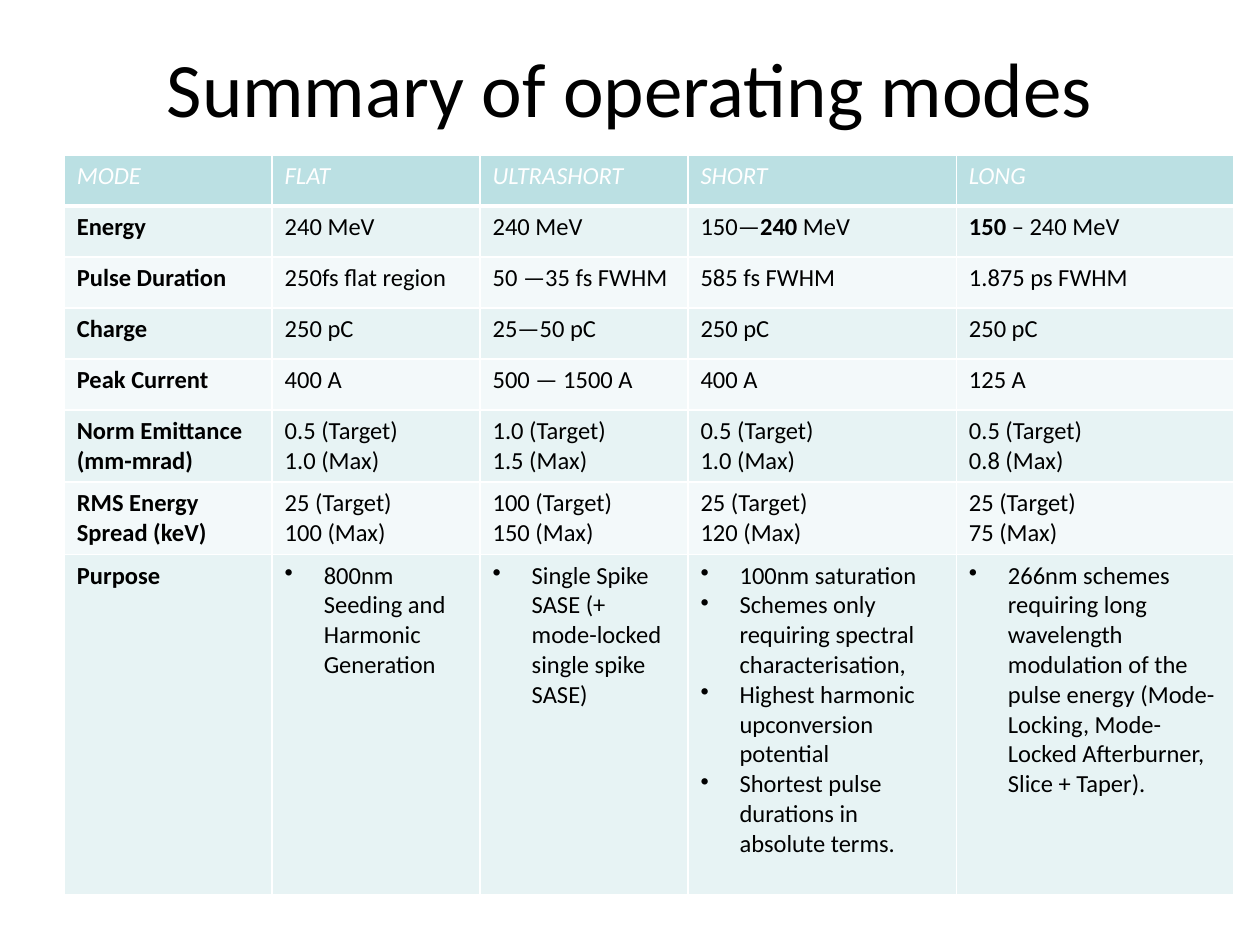
from lxml import etree
from pptx import Presentation
from pptx import util as u
from pptx.dml.color import RGBColor
from pptx.enum import text
from pptx.oxml import ns

HUES = {"head": "BBE0E3", "dark": "E7F3F4", "light": "F3F9FA",
        "ink": "000000", "white": "FFFFFF"}

# Shares of the slide's size, in percent
COLS = [16.5, 16.5, 16.5, 21.3, 22]
ROWS = [5.4] * 5 + [7.65] * 2 + [36]

# Asterisks enclose bold words; a list is set as bullets
MODES = [
    ["MODE", "FLAT", "ULTRASHORT", "SHORT", "LONG"],
    ["Energy", "240 MeV", "240 MeV", "150—*240* MeV", "*150* – 240 MeV"],
    ["Pulse Duration", "250fs flat region", "50 —35 fs FWHM",
     "585 fs FWHM", "1.875 ps FWHM"],
    ["Charge", "250 pC", "25—50 pC", "250 pC", "250 pC"],
    ["Peak Current", "400 A", "500 — 1500 A", "400 A", "125 A"],
    ["Norm Emittance\n(mm-mrad)", "0.5 (Target)\n1.0 (Max)",
     "1.0 (Target)\n1.5 (Max)", "0.5 (Target)\n1.0 (Max)",
     "0.5 (Target)\n0.8 (Max)"],
    ["RMS Energy Spread (keV)", "25 (Target)\n100 (Max)",
     "100 (Target)\n150 (Max)", "25 (Target)\n120 (Max)",
     "25 (Target)\n75 (Max)"],
    ["Purpose",
     ["800nm Seeding and Harmonic Generation"],
     ["Single Spike SASE (+ mode-locked single spike SASE)"],
     ["100nm saturation",
      "Schemes only requiring spectral characterisation,",
      "Highest harmonic upconversion potential",
      "Shortest pulse durations in absolute terms."],
     ["266nm schemes requiring long wavelength modulation of the pulse "
      "energy (Mode-Locking, Mode-Locked Afterburner, Slice + Taper)."]],
]


class Deck:
    face = "Calibri"

    def __init__(self, wide, high):
        self.prs = Presentation()
        self.prs.slide_width = u.Inches(wide)
        self.prs.slide_height = u.Inches(high)
        self.slide = self.prs.slides.add_slide(self.prs.slide_layouts[6])

    def across(self, share):
        return round(self.prs.slide_width * share / 100)

    def down(self, share):
        return round(self.prs.slide_height * share / 100)

    def style(self, para, size, hue="ink", bold=False, slant=False):
        font = para.font
        font.name, font.size = self.face, u.Pt(size)
        font.bold, font.italic = bold, slant
        font.color.rgb = RGBColor.from_string(HUES[hue])

    def title(self, words, left, top, wide, high):
        box = self.slide.shapes.add_textbox(
            self.across(left), self.down(top),
            self.across(wide), self.down(high))
        frame = box.text_frame
        frame.word_wrap = True
        frame.vertical_anchor = text.MSO_ANCHOR.MIDDLE
        para = frame.paragraphs[0]
        para.text = words
        para.alignment = text.PP_ALIGN.CENTER
        self.style(para, 44)

    def table(self, data, left, top, cols, rows):
        grid = self.slide.shapes.add_table(
            len(rows), len(cols), self.across(left), self.down(top),
            self.across(sum(cols)), self.down(sum(rows))).table
        for col, share in zip(grid.columns, cols):
            col.width = self.across(share)
        for row, share in zip(grid.rows, rows):
            row.height = self.down(share)
        for r, line in enumerate(data):
            for c, item in enumerate(line):
                self.cell(grid.cell(r, c), item, r, c)

    def cell(self, cell, item, row, col):
        if row == 0:
            self.edge(cell)
        fill = "head" if row == 0 else "dark" if row % 2 else "light"
        cell.fill.solid()
        cell.fill.fore_color.rgb = RGBColor.from_string(HUES[fill])
        listed = isinstance(item, list)
        frame = cell.text_frame
        for i, words in enumerate(item if listed else [item]):
            para = frame.add_paragraph() if i else frame.paragraphs[0]
            self.runs(para, words)
            if row == 0:
                self.style(para, 14, "white", slant=True)
            else:
                self.style(para, 14, bold=col == 0)
            if listed:
                self.bullet(para)

    def runs(self, para, words):
        """Add words to a paragraph, with line breaks and bold parts."""
        for i, line in enumerate(words.split("\n")):
            if i:
                para.add_line_break()
            for j, part in enumerate(line.split("*")):
                if part:
                    run = para.add_run()
                    run.text = part
                    if j % 2:
                        run.font.bold = True

    def bullet(self, para):
        props = para._p.get_or_add_pPr()
        props.set("marL", str(u.Inches(0.31)))
        props.set("indent", str(-u.Inches(0.31)))
        mark = etree.Element(ns.qn("a:buChar"), char="•")
        props.insert(0, mark)

    def edge(self, cell):
        """Give a header cell white borders, heavier below."""
        props = cell._tc.get_or_add_tcPr()
        for side, width in zip("LRTB", (1, 1, 1, 3)):
            line = etree.SubElement(props, ns.qn("a:ln" + side),
                                    w=str(u.Pt(width)))
            fill = etree.SubElement(line, ns.qn("a:solidFill"))
            etree.SubElement(fill, ns.qn("a:srgbClr"), val=HUES["white"])


def main():
    deck = Deck(10, 7.5)
    deck.title("Summary of operating modes", 5, 4, 90, 10.27)
    deck.table(MODES, 5.1, 16.4, COLS, ROWS)
    deck.prs.save("out.pptx")


if __name__ == "__main__":
    main()
